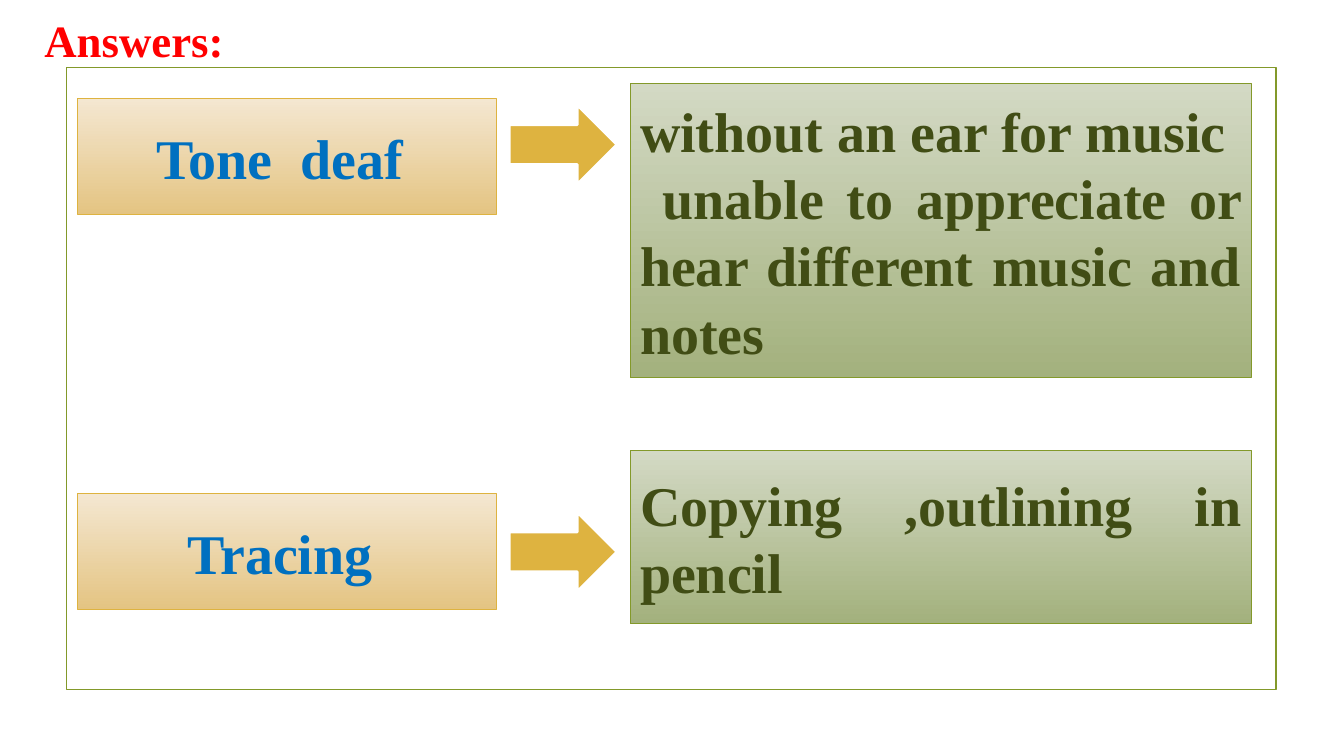
from pptx import Presentation
from pptx.dml.color import RGBColor
from pptx.enum.shapes import MSO_SHAPE
from pptx.enum.text import MSO_ANCHOR, MSO_AUTO_SIZE, PP_ALIGN
from pptx.util import Inches, Pt

RECTANGLE, ARROW = MSO_SHAPE.RECTANGLE, MSO_SHAPE.RIGHT_ARROW
LEFT, CENTER, JUSTIFY = PP_ALIGN.LEFT, PP_ALIGN.CENTER, PP_ALIGN.JUSTIFY
MIDDLE = MSO_ANCHOR.MIDDLE
FIT_SHAPE = MSO_AUTO_SIZE.SHAPE_TO_FIT_TEXT

COLORS = {
    "title": "FF0000", "term": "0070C0", "meaning": "414D15",
    "green": "83992A", "gold": "DEB340", "white": "FFFFFF",
    "gold light": "F4E7D1", "gold dark": "E4C482",
    "green light": "D3D9C4", "green dark": "A3B17D",
}

# Columns as (left, width) in inches
TERM_COLUMN, ARROW_COLUMN, MEANING_COLUMN = (0.77, 4.15), (5.05, 1.07), (6.25, 6.16)
TERM_HEIGHT, ARROW_HEIGHT = 1.15, 0.79

# Rows: term, term top, arrow top, meaning, meaning top, meaning height
ROWS = [
    ("Tone  deaf ", 0.98, 1.04,
     "without an ear for music\n unable to appreciate or hear different music and notes",
     0.83, 2.92),
    ("Tracing ", 4.9, 5.08, "Copying ,outlining in pencil", 4.47, 1.72),
]


def add_block(kind, column, top, height, line, line_width, gradient=None):
    left, width = column
    shape = slide.shapes.add_shape(
        kind, Inches(left), Inches(top), Inches(width), Inches(height))
    shape.shadow.inherit = False
    shape.line.color.rgb = RGBColor.from_string(COLORS[line])
    shape.line.width = Pt(line_width)
    if gradient:
        shape.fill.gradient()
        shape.fill.gradient_angle = 270
        for stop, tone in zip(shape.fill.gradient_stops, ("light", "dark")):
            stop.color.rgb = RGBColor.from_string(COLORS[f"{gradient} {tone}"])
    return shape


def write_text(shape, text, size, color, alignment):
    frame = shape.text_frame
    frame.text = text
    frame.vertical_anchor = MIDDLE
    for paragraph in frame.paragraphs:
        paragraph.alignment = alignment
        for run in paragraph.runs:
            run.font.name = "Times New Roman"
            run.font.size = Pt(size)
            run.font.bold = True
            run.font.color.rgb = RGBColor.from_string(COLORS[color])


presentation = Presentation()
presentation.slide_width, presentation.slide_height = Inches(13.33), Inches(7.5)
slide = presentation.slides.add_slide(presentation.slide_layouts[5])

# Title
title = slide.shapes.title
title.left, title.top = Inches(0.34), Inches(0.07)
title.width, title.height = Inches(2.03), Inches(0.64)
write_text(title, "Answers:", 32, "title", LEFT)
title.text_frame.word_wrap = False
title.text_frame.auto_size = FIT_SHAPE

# Frame around the answers
add_block(RECTANGLE, (0.66, 12), 0.67, 6.17, "green", 1.25).fill.background()

# Each term with an arrow to its meaning
for term, term_top, arrow_top, meaning, meaning_top, meaning_height in ROWS:
    term_box = add_block(RECTANGLE, TERM_COLUMN, term_top, TERM_HEIGHT,
                         "gold", 0.75, "gold")
    write_text(term_box, term, 40, "term", CENTER)

    meaning_box = add_block(RECTANGLE, MEANING_COLUMN, meaning_top, meaning_height,
                            "green", 0.75, "green")
    write_text(meaning_box, meaning, 40, "meaning", JUSTIFY)

    arrow = add_block(ARROW, ARROW_COLUMN, arrow_top, ARROW_HEIGHT, "white", 2)
    arrow.fill.solid()
    arrow.fill.fore_color.rgb = RGBColor.from_string(COLORS["gold"])

presentation.save("out.pptx")
